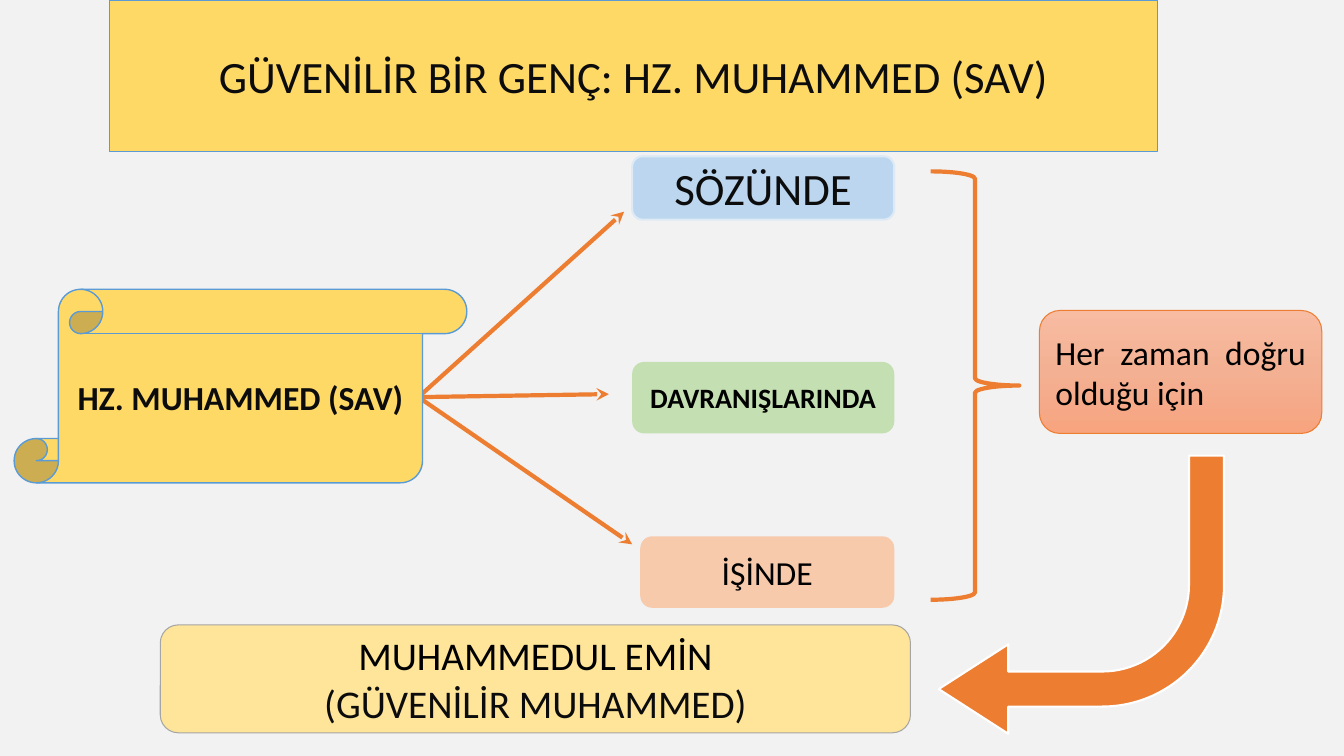
from copy import deepcopy
from dataclasses import dataclass

from lxml.etree import SubElement
from pptx import Presentation
from pptx.dml.color import RGBColor
from pptx.enum.shapes import MSO_CONNECTOR, MSO_SHAPE
from pptx.enum.text import MSO_ANCHOR, MSO_AUTO_SIZE, PP_ALIGN
from pptx.oxml.ns import qn
from pptx.util import Inches, Pt

BACKGROUND = RGBColor(0xF2, 0xF2, 0xF2)
BLACK = RGBColor(0, 0, 0)
INK = RGBColor(0x0C, 0x0C, 0x0C)
WHITE = RGBColor(0xFF, 0xFF, 0xFF)
ORANGE = RGBColor(0xED, 0x7D, 0x31)
GOLD = RGBColor(0xFF, 0xD9, 0x66)
PALE_GOLD = RGBColor(0xFE, 0xE5, 0x99)
GREY = RGBColor(0xA5, 0xA5, 0xA5)
BLUE = RGBColor(0x5B, 0x9B, 0xD5)
SKY = RGBColor(0xBB, 0xD6, 0xEE)
PALE_SKY = RGBColor(0xDD, 0xEA, 0xF6)
GREEN = RGBColor(0xC4, 0xE0, 0xB2)
PEACH = RGBColor(0xF7, 0xCA, 0xAC)
REASON_GRADIENT = (
    (0, RGBColor(0xF7, 0xBC, 0xA2)),
    (0.5, RGBColor(0xF4, 0xB0, 0x93)),
    (1, RGBColor(0xF7, 0xA4, 0x7F)),
)
FONT = "Calibri"


@dataclass(frozen=True)
class Figure:
    kind: MSO_SHAPE
    box: tuple[float, float, float, float]
    adjustments: tuple[float, ...] = (0.167,)
    fill: RGBColor | None = None
    line: RGBColor | None = None
    line_width: float = 0.75
    rotation: float = 0


@dataclass(frozen=True)
class Quality:
    """One field of trustworthiness and the tip of the arrow leading to it."""
    text: str
    figure: Figure
    arrow_tip: tuple[float, float]
    size: int
    color: RGBColor = BLACK
    bold: bool = False


ARROW_START = (4.15, 3.94)
QUALITIES = (
    Quality("SÖZÜNDE",
            Figure(MSO_SHAPE.ROUNDED_RECTANGLE, (6.27, 1.55, 2.6, 0.63),
                   fill=SKY, line=PALE_SKY, line_width=1.5),
            (6.19, 2.1), 32, INK),
    Quality("DAVRANIŞLARINDA",
            Figure(MSO_SHAPE.ROUNDED_RECTANGLE, (6.27, 3.59, 2.6, 0.71), fill=GREEN),
            (6.04, 3.91), 20, bold=True),
    Quality("İŞİNDE",
            Figure(MSO_SHAPE.ROUNDED_RECTANGLE, (6.35, 5.32, 2.52, 0.71), fill=PEACH),
            (6.27, 5.4), 24),
)
BRACE = Figure(MSO_SHAPE.RIGHT_BRACE, (9.23, 1.7, 0.88, 4.25), (0.083, 0.5),
               line=ORANGE, line_width=3)
REASON = Figure(MSO_SHAPE.ROUNDED_RECTANGLE, (10.31, 3.08, 2.8, 1.22), line=ORANGE)
RESULT_ARROW = Figure(MSO_SHAPE.BENT_ARROW, (9.31, 4.52, 2.83, 2.76),
                      (0.126, 0.161, 0.25, 0.438), ORANGE, WHITE, 1.5, 180)
RESULT = Figure(MSO_SHAPE.ROUNDED_RECTANGLE, (1.59, 6.2, 7.44, 1.07),
                fill=PALE_GOLD, line=GREY)
PERSON = Figure(MSO_SHAPE.VERTICAL_SCROLL, (0.14, 2.87, 4.49, 1.92), (0.229,),
                GOLD, BLUE, 1)


def paint(shape, fill: RGBColor | None, line: RGBColor | None, width: float) -> None:
    if fill is None:
        shape.fill.background()
    else:
        shape.fill.solid()
        shape.fill.fore_color.rgb = fill
    if line is None:
        shape.line.fill.background()
    else:
        shape.line.color.rgb = line
        shape.line.width = Pt(width)


def draw(slide, figure: Figure):
    shape = slide.shapes.add_shape(figure.kind, *map(Inches, figure.box))
    shape.shadow.inherit = False
    shape.rotation = figure.rotation
    for index, value in enumerate(figure.adjustments):
        shape.adjustments[index] = value
    paint(shape, figure.fill, figure.line, figure.line_width)
    return shape


def write(shape, *lines: str, size: int, colors: tuple[RGBColor, ...] = (BLACK,),
          bold: bool = False, align: PP_ALIGN = PP_ALIGN.CENTER) -> None:
    """Fill a shape with one paragraph per line; the last colour serves the rest."""
    frame = shape.text_frame
    frame.word_wrap = True
    frame.auto_size = MSO_AUTO_SIZE.NONE
    frame.vertical_anchor = MSO_ANCHOR.MIDDLE
    for index, line in enumerate(lines):
        paragraph = frame.paragraphs[0] if index == 0 else frame.add_paragraph()
        paragraph.alignment = align
        run = paragraph.add_run()
        run.text = line
        run.font.name = FONT
        run.font.size = Pt(size)
        run.font.bold = bold
        run.font.color.rgb = colors[min(index, len(colors) - 1)]


def draw_arrow(slide, start: tuple[float, float], tip: tuple[float, float]) -> None:
    arrow = slide.shapes.add_connector(MSO_CONNECTOR.STRAIGHT, *map(Inches, start + tip))
    arrow.line.color.rgb = ORANGE
    arrow.line.width = Pt(3)
    properties = arrow.element.spPr
    SubElement(properties.find(qn("a:ln")), qn("a:tailEnd"), type="stealth")
    SubElement(properties, qn("a:effectLst"))


def apply_gradient(shape, stops: tuple[tuple[float, RGBColor], ...]) -> None:
    """Colour a shape from top to bottom through three stops."""
    shape.fill.gradient()
    shape.fill.gradient_angle = 270
    stop_list = shape.element.spPr.find(qn("a:gradFill")).find(qn("a:gsLst"))
    stop_list.insert(1, deepcopy(stop_list[0]))
    for stop, (position, color) in zip(shape.fill.gradient_stops, stops):
        stop.position = position
        stop.color.rgb = color


def add_title_scroll(slide) -> None:
    """Turn the title placeholder into a horizontal scroll."""
    title = slide.shapes.title
    title.left, title.top, title.width, title.height = map(Inches, (1.09, 0, 10.39, 1.5))
    geometry = SubElement(title.element.spPr, qn("a:prstGeom"), prst="horizontalScroll")
    guides = SubElement(geometry, qn("a:avLst"))
    SubElement(guides, qn("a:gd"), name="adj", fmla="val 20500")
    paint(title, GOLD, BLUE, 0.75)
    write(title, "GÜVENİLİR BİR GENÇ: HZ. MUHAMMED (SAV)", size=32, colors=(INK,))


def main() -> None:
    deck = Presentation()
    deck.slide_width, deck.slide_height = Inches(13.33), Inches(7.5)
    slide = deck.slides.add_slide(deck.slide_layouts.get_by_name("Title Only"))
    slide.background.fill.solid()
    slide.background.fill.fore_color.rgb = BACKGROUND

    add_title_scroll(slide)
    for quality in QUALITIES:
        draw_arrow(slide, ARROW_START, quality.arrow_tip)
        write(draw(slide, quality.figure), quality.text, size=quality.size,
              colors=(quality.color,), bold=quality.bold)
    draw(slide, BRACE)

    reason = draw(slide, REASON)
    apply_gradient(reason, REASON_GRADIENT)
    write(reason, "Her zaman doğru olduğu için", size=24, align=PP_ALIGN.JUSTIFY)

    draw(slide, RESULT_ARROW)
    write(draw(slide, RESULT), "MUHAMMEDUL EMİN", "(GÜVENİLİR MUHAMMED)",
          size=28, colors=(BLACK, INK))
    write(draw(slide, PERSON), "HZ. MUHAMMED (SAV)", size=24, colors=(INK,), bold=True)
    deck.save("out.pptx")


if __name__ == "__main__":
    main()
